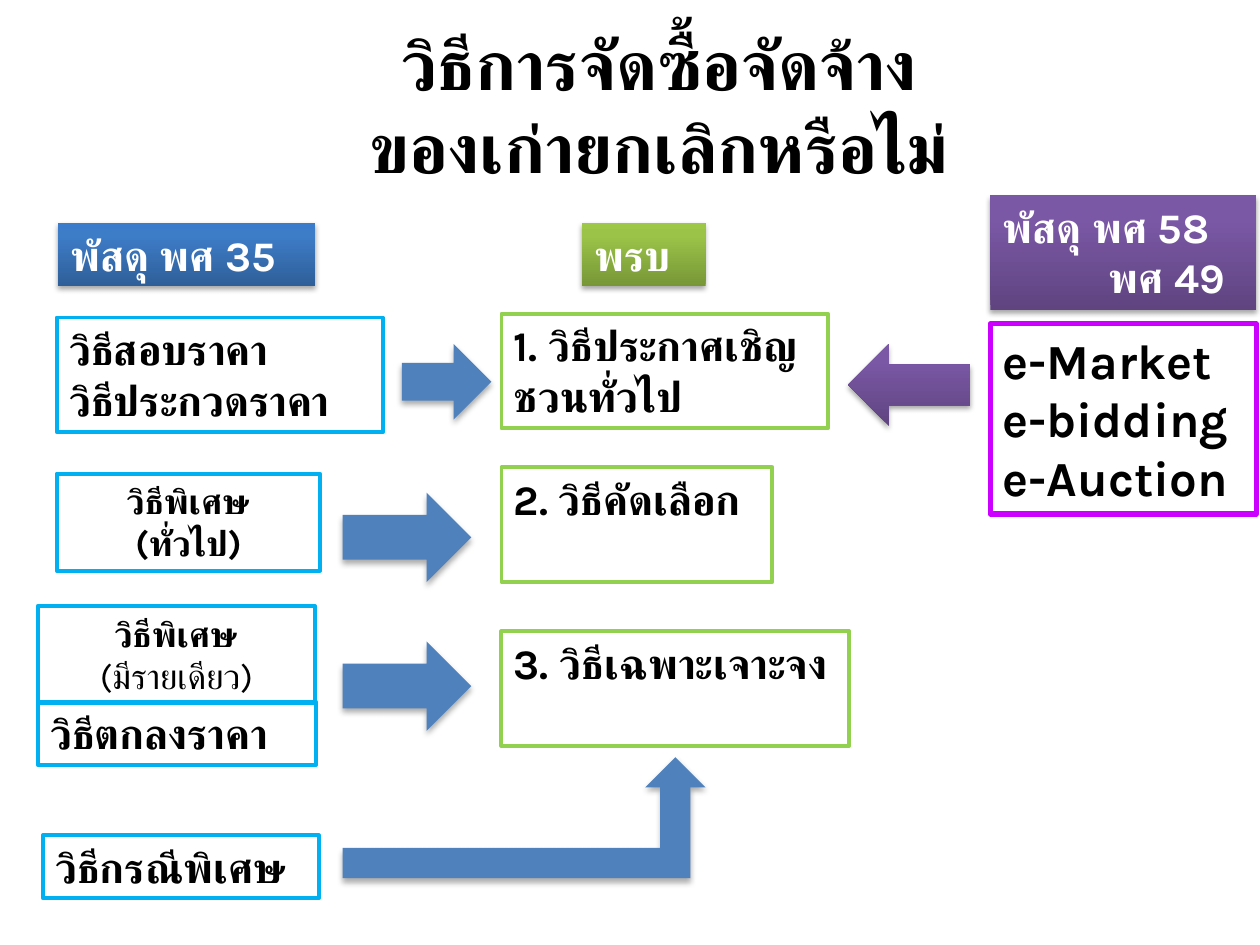
from copy import deepcopy
from lxml.etree import SubElement
from pptx import Presentation
from pptx.dml.color import RGBColor
from pptx.enum.shapes import MSO_SHAPE
from pptx.enum.text import MSO_ANCHOR, MSO_AUTO_SIZE, PP_ALIGN
from pptx.oxml.ns import qn
from pptx.util import Inches, Pt

FONT = "Karla"
COLS, ROWS, UNIT = 100, 75, 0.1
SKY, LIME, PINK, STEEL = "00B0F0", "92D050", "CC00FF", "4F81BD"
BLUE = ("2F5F99", "3D7CC7", "3A7CCB")
GREEN = ("779737", "9BC348", "9DC746")
PURPLE = ("5F4480", "7B58A6", "7C57A8")


def cells(count):
    """Turn grid cells into a length."""
    return Inches(count * UNIT)


def paint(color, code):
    """Set a colour from a hex string."""
    color.rgb = RGBColor.from_string(code)


def put(para, text, size, code="000000", bold=True):
    """Add one run, with the font for Latin and Thai letters."""
    run = para.add_run()
    run.text = text
    font = run.font
    font.name, font.size, font.bold = FONT, Pt(size), bold
    paint(font.color, code)
    SubElement(font._element, qn("a:cs")).set("typeface", FONT)


def shade(shape, blur, drop, alpha):
    """Give a shape a soft shadow straight below."""
    effects = shape._element.spPr.find(qn("a:effectLst"))
    outer = SubElement(effects, qn("a:outerShdw"), blurRad=str(Pt(blur)),
                       dist=str(Pt(drop)), dir="5400000", rotWithShape="0")
    tint = SubElement(outer, qn("a:srgbClr"), val="000000")
    SubElement(tint, qn("a:alpha"), val=str(alpha * 1000))


def blend(shape, tones):
    """Fill a shape with three tones from the bottom up."""
    fill = shape.fill
    fill.gradient()
    fill.gradient_angle = 90
    stops = shape._element.spPr.find(".//" + qn("a:gsLst"))
    stops.append(deepcopy(stops[-1]))
    for stop, spot, tone in zip(fill.gradient_stops, (0, 0.8, 1), tones):
        stop.position = spot
        paint(stop.color, tone)


def form(slide, kind, box):
    """Place a bare shape on the grid."""
    shape = slide.shapes.add_shape(kind, *map(cells, box))
    shape.shadow.inherit = False
    shape.line.fill.background()
    return shape


def write(shape, lines, size, code="000000", align=PP_ALIGN.LEFT, light=()):
    """Write one paragraph for each line and return the last."""
    frame = shape.text_frame
    frame.word_wrap = True
    frame.vertical_anchor = MSO_ANCHOR.TOP
    for num, line in enumerate(lines):
        para = frame.add_paragraph() if num else frame.paragraphs[0]
        para.alignment = align
        put(para, line, size, code, num not in light)
    return para


def head(slide, box, lines, tones):
    """Draw a shaded heading and return its last paragraph."""
    shape = form(slide, MSO_SHAPE.RECTANGLE, box)
    blend(shape, tones)
    shade(shape, 3.1, 1.8, 35)
    return write(shape, lines, 24, "FFFFFF")


def frame(slide, box, lines, edge, size=24, width=2.25, **style):
    """Draw an outlined box of text."""
    shape = form(slide, MSO_SHAPE.RECTANGLE, box)
    shape.fill.background()
    paint(shape.line.color, edge)
    shape.line.width = Pt(width)
    write(shape, lines, size, **style)


def arrow(slide, kind, box):
    """Draw a plain arrow with a shadow."""
    shape = form(slide, kind, box)
    shape.fill.solid()
    paint(shape.fill.fore_color, STEEL)
    shade(shape, 3.5, 2.2, 32)


def title(slide, box):
    """Set the two-line title."""
    shape = slide.shapes.title
    shape.left, shape.top, shape.width, shape.height = map(cells, box)
    text = shape.text_frame
    text.auto_size = MSO_AUTO_SIZE.NONE
    text.vertical_anchor = MSO_ANCHOR.MIDDLE
    para = text.paragraphs[0]
    para.alignment = PP_ALIGN.CENTER
    put(para, "วิธีการจัดซื้อจัดจ้าง", 39.6)
    para.add_line_break()
    put(para, "ของเก่ายกเลิกหรือไม่", 39.6)


def old(slide, x, y):
    """Draw the column of old methods."""
    mid = PP_ALIGN.CENTER
    head(slide, (x + 1.6, y, 20.4, 5), ["พัสดุ พศ 35"], BLUE)
    frame(slide, (x + 1.5, y + 7.5, 25.9, 9.1), ["วิธีสอบราคา", "วิธีประกวดราคา"], SKY)
    frame(slide, (x + 1.5, y + 19.9, 20.9, 7.7), ["วิธีพิเศษ", "(ทั่วไป)"], SKY, 20, align=mid)
    frame(slide, (x, y + 30.4, 22, 7.7), ["วิธีพิเศษ", "(มีรายเดียว)"], SKY, 20,
          align=mid, light=(1,))
    frame(slide, (x, y + 38, 22.1, 5), ["วิธีตกลงราคา"], SKY)
    frame(slide, (x + 0.4, y + 48.6, 21.9, 5), ["วิธีกรณีพิเศษ"], SKY)


def act(slide, x, y):
    """Draw the column of methods in the act."""
    head(slide, (x + 6.4, y, 9.8, 5), ["พรบ"], GREEN)
    for row, width, line in ((7.2, 25.9, "1. วิธีประกาศเชิญชวนทั่วไป"),
                             (19.4, 21.5, "2. วิธีคัดเลือก"),
                             (32.4, 27.6, "3. วิธีเฉพาะเจาะจง")):
        frame(slide, (x, y + row, width, 9.1), [line], LIME)


def new(slide, x, y, width):
    """Draw the column of electronic methods and its arrow."""
    last = head(slide, (x, y, width, 9.1), ["พัสดุ พศ 58", "พศ 49"], PURPLE)
    last._p.get_or_add_pPr().set("marL", str(cells(8.4)))
    frame(slide, (x, y + 10.2, width, 15.1), ["e-Market", "e-bidding", "e-Auction"],
          PINK, 28, 3)
    back = form(slide, MSO_SHAPE.LEFT_ARROW, (x - 11.3, y + 11.8, 9.7, 6.5))
    blend(back, PURPLE)
    shade(back, 3.1, 1.8, 35)


def links(slide, x, y):
    """Draw the arrows from the old methods to the act."""
    right = MSO_SHAPE.RIGHT_ARROW
    arrow(slide, right, (x + 4.7, y, 7.1, 6))
    for row in (11.8, 23.6):
        arrow(slide, right, (x, y + row, 10.2, 7.1))
    arrow(slide, MSO_SHAPE.BENT_UP_ARROW, (x, y + 32.8, 28.8, 9.6))


def main():
    """Build and save the slide."""
    deck = Presentation()
    deck.slide_width, deck.slide_height = cells(COLS), cells(ROWS)
    slide = deck.slides.add_slide(deck.slide_layouts[5])
    title(slide, (9.8, 2.1, 85, 12.4))
    old(slide, 3, 17.7)
    act(slide, 39.8, 17.7)
    new(slide, 78.6, 15.5, 21.1)
    links(slide, 27.2, 27.3)
    deck.save("out.pptx")


if __name__ == "__main__":
    main()
